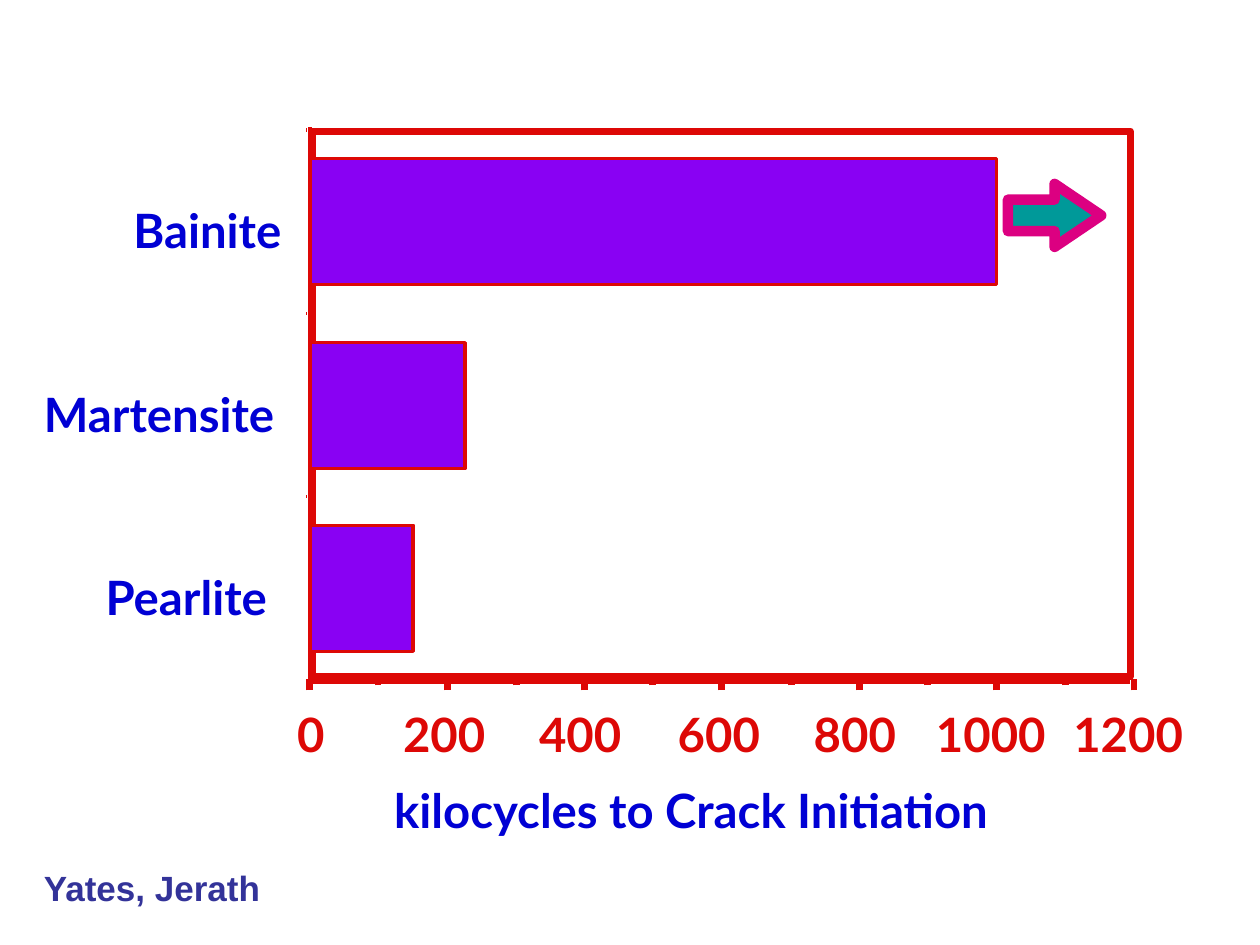
from pptx import Presentation
from pptx.dml.color import RGBColor
from pptx.enum.shapes import MSO_CONNECTOR as Link, MSO_SHAPE as Shape
from pptx.enum.text import MSO_AUTO_SIZE as AutoSize
from pptx.oxml.ns import qn
from pptx.util import Emu, Pt
from lxml.etree import SubElement

PX = 9144  # EMU per px, 100 px to the inch

RED = RGBColor(0xDD, 0x08, 0x06)
BLUE = RGBColor(0x00, 0x00, 0xD4)
NAVY = RGBColor(0x33, 0x33, 0x99)
VIOLET = RGBColor(0x89, 0x01, 0xF3)
TEAL = RGBColor(0x00, 0x99, 0x99)
MAGENTA = RGBColor(0xDC, 0x00, 0x81)

# Chart geometry
AXIS_X, AXIS_Y = 246, 540
TOP = 103
ROW = (AXIS_Y - TOP) / 3
TICK = 54.5  # px per 100 kilocycles


def px(*lengths):
    return [Emu(round(length) * PX) for length in lengths]


class Painter:
    def __init__(self, page, font="Lato", size=27):
        self.page = page
        self.font = font
        self.size = size

    def text(self, words, left, top, width, height, color,
             font=None, size=None, wrap=False):
        box = self.page.shapes.add_textbox(*px(left, top, width, height))
        frame = box.text_frame
        frame.word_wrap = wrap
        frame.auto_size = AutoSize.SHAPE_TO_FIT_TEXT
        para = frame.paragraphs[0]
        span = para.add_run()
        span.text = words
        span.font.name = font or self.font
        span.font.size = Pt(size or self.size)
        span.font.bold = True
        span.font.color.rgb = color

    def line(self, x1, y1, x2, y2, weight):
        line = self.page.shapes.add_connector(
            Link.STRAIGHT, *px(x1, y1, x2, y2))
        line.line.color.rgb = RED
        line.line.width = Pt(weight)
        SubElement(line._element.spPr, qn("a:effectLst"))

    def shape(self, kind, left, top, width, height, edge, weight, fill=None):
        shape = self.page.shapes.add_shape(
            kind, *px(left, top, width, height))
        shape.shadow.inherit = False
        if fill is None:
            shape.fill.background()
        else:
            shape.fill.solid()
            shape.fill.fore_color.rgb = fill
        shape.line.color.rgb = edge
        shape.line.width = Pt(weight)
        return shape


def main():
    deck = Presentation()
    deck.slide_width, deck.slide_height = px(1000, 750)
    page = deck.slides.add_slide(deck.slide_layouts[6])
    painter = Painter(page)

    # Value labels, centred on the major ticks
    for index in range(7):
        label = str(200 * index)
        width = 20 + 25 * len(label)
        center = AXIS_X + 2 + 2 * TICK * index
        painter.text(label, center - width / 2, 555, width, 55, RED)

    # Value axis with major and minor ticks
    for index in range(13):
        x = AXIS_X + TICK * index
        end = 544 if index % 2 else 548
        painter.line(x, end, x, 539, 4)
    painter.line(248, AXIS_Y, 897, AXIS_Y, 4)

    # Category axis
    for index in range(4):
        y = TOP + ROW * index
        painter.line(243, y, 244, y, 2)
    painter.line(AXIS_X, AXIS_Y, AXIS_X, 101, 2)

    # Plot frame
    painter.shape(Shape.RECTANGLE, 248, 104, 649, 433, RED, 4)

    # Bars with their category labels: name, kilocycles, label left and width
    bars = [
        ("Bainite", 1000, 96, 142),
        ("Martensite", 225, 25, 211),
        ("Pearlite", 150, 74, 154),
    ]
    for index, (name, cycles, left, width) in enumerate(bars):
        top = TOP + ROW * index
        painter.text(name, left, top + 52, width, 55, BLUE)
        painter.shape(Shape.RECTANGLE, AXIS_X, top + 23,
                      cycles * TICK / 100, 100, RED, 2, VIOLET)

    # Axis title and source
    painter.text("kilocycles to Crack Initiation", 303, 615, 525, 55, BLUE)
    painter.text("Yates, Jerath", 25, 683, 258, 43, NAVY,
                 font="Arial", size=20, wrap=True)

    # Arrow: the Bainite test ran on past the bar
    arrow = painter.shape(Shape.RIGHT_ARROW, 800, 146, 74, 50,
                          MAGENTA, 6, TEAL)
    arrow.adjustments[0] = 0.5
    arrow.adjustments[1] = 0.74

    deck.save("out.pptx")


if __name__ == "__main__":
    main()
